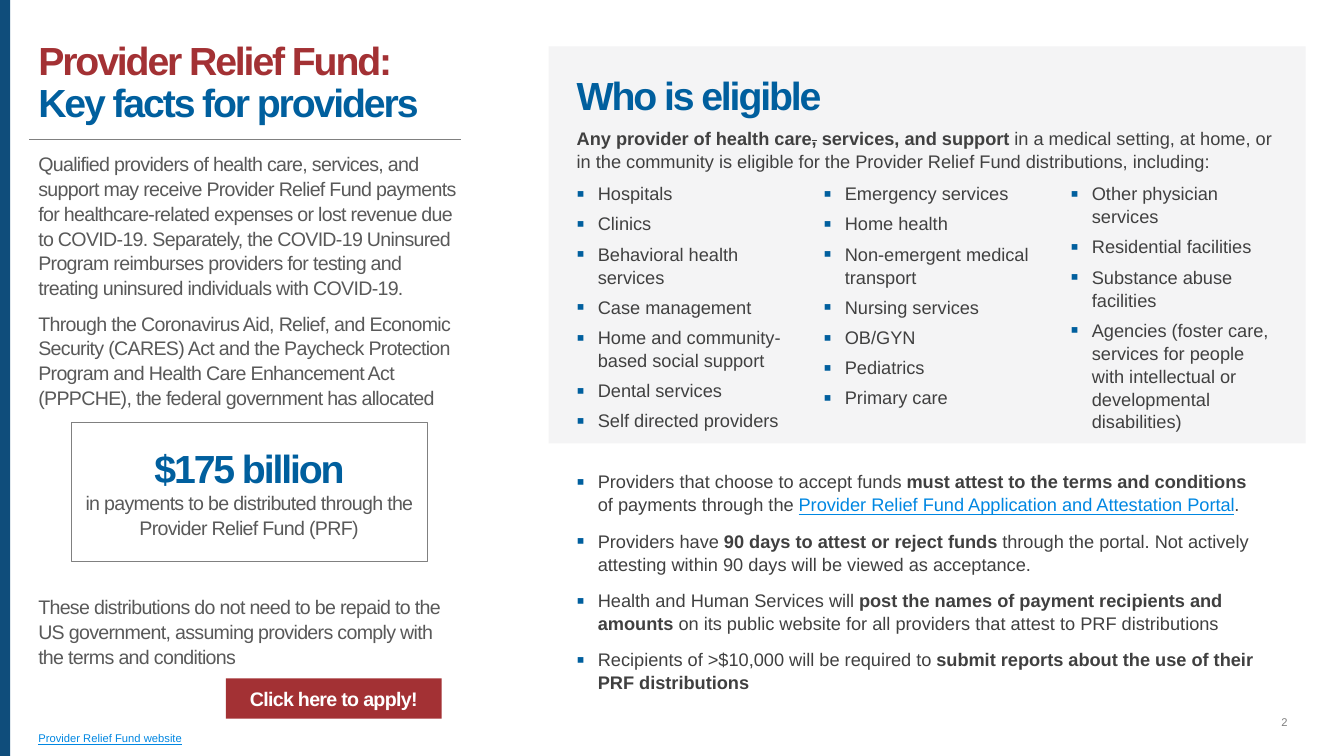
from lxml import etree
from pptx import Presentation, util as u
from pptx.dml.color import RGBColor
from pptx.enum import shapes, text
from pptx.oxml import ns

SCALE = 9144  # EMU per px, 100 px to the inch
COLORS = {
    "navy": "0F4D7B", "blue": "005F9E", "red": "A33134", "link": "0087E2",
    "panel": "F4F4F5", "rule": "808080", "body": "595959", "dark": "404040",
    "white": "FFFFFF",
}
ALIGN = {"left": text.PP_ALIGN.LEFT, "center": text.PP_ALIGN.CENTER}
ANCHOR = {"top": text.MSO_ANCHOR.TOP, "middle": text.MSO_ANCHOR.MIDDLE,
          "bottom": text.MSO_ANCHOR.BOTTOM}
BODY = dict(size=14, color="body", tracking=-50, anchor="bottom")
HEADING = dict(size=28, color="blue", bold=True, tracking=-150, anchor="bottom")
DETAIL = dict(size=13, color="dark")
BOLD = dict(bold=True)
LINK = dict(color="link", underline=True)


def px(*lengths):
    return [u.Emu(length * SCALE) for length in lengths]


def rgb(name):
    return RGBColor.from_string(COLORS[name])


class SlideBuilder:
    def __init__(self, presentation, font="Arial"):
        self.slide = presentation.slides.add_slide(presentation.slide_layouts[5])
        self.font = font

    def add_bullet(self, paragraph):
        properties = paragraph._p.get_or_add_pPr()
        properties.set("marL", str(21 * SCALE))
        properties.set("indent", str(-21 * SCALE))

        def add(parent, tag, **attributes):
            return etree.SubElement(parent, ns.qn(tag), **attributes)

        add(add(properties, "a:buClr"), "a:srgbClr", val=COLORS["blue"])
        add(properties, "a:buSzPct", val="125000")
        add(properties, "a:buFont", typeface=self.font)
        add(properties, "a:buChar", char="▪")

    def add_run(self, paragraph, words, size, color, bold=False, underline=False,
                strike=False, tracking=0):
        for index, line in enumerate(words.split("\n")):
            if index:
                paragraph.add_line_break()
            if not line:
                continue
            run = paragraph.add_run()
            run.text = line
            font = run.font
            font.name, font.size, font.bold = self.font, u.Pt(size), bold
            font.color.rgb = rgb(color)
            properties = run._r.get_or_add_rPr()
            if underline:
                font.underline = True
            if strike:
                properties.set("strike", "sngStrike")
            if tracking:
                properties.set("spc", str(tracking))

    def fill_text(self, shape, paragraphs, align="left", anchor="top", before=0,
                  line=1.05, bullets=False, margin=0, wrap=True, **style):
        """Fill a shape; a paragraph is a string or a list of (words, changes)."""
        frame = shape.text_frame
        frame.auto_size = text.MSO_AUTO_SIZE.NONE
        frame.word_wrap = wrap
        frame.vertical_anchor = ANCHOR[anchor]
        frame.margin_left = frame.margin_right = u.Emu(margin * SCALE)
        frame.margin_top = frame.margin_bottom = 0
        for index, runs in enumerate(paragraphs):
            paragraph = frame.add_paragraph() if index else frame.paragraphs[0]
            if bullets:
                self.add_bullet(paragraph)
            paragraph.alignment = ALIGN[align]
            paragraph.line_spacing = line
            paragraph.space_before = u.Pt(before if index else 0)
            for words, changes in [(runs, {})] if isinstance(runs, str) else runs:
                self.add_run(paragraph, words, **{**style, **changes})

    def title(self, box, paragraphs, **style):
        title = self.slide.shapes.title
        title.left, title.top, title.width, title.height = px(*box)
        self.fill_text(title, paragraphs, **style)

    def text(self, box, *paragraphs, **style):
        self.fill_text(self.slide.shapes.add_textbox(*px(*box)), paragraphs, **style)

    def box(self, box, fill=None, line=None, kind=shapes.MSO_SHAPE.RECTANGLE):
        shape = self.slide.shapes.add_shape(kind, *px(*box))
        shape.shadow.inherit = False
        if fill:
            shape.fill.solid()
            shape.fill.fore_color.rgb = rgb(fill)
        else:
            shape.fill.background()
        if line:
            shape.line.color.rgb = rgb(line)
            shape.line.width = u.Pt(0.75)
        else:
            shape.line.fill.background()
        return shape

    def button(self, box, words, **style):
        shape = self.box(box, fill="red", kind=shapes.MSO_SHAPE.ROUNDED_RECTANGLE)
        shape.adjustments[0] = 0
        self.fill_text(shape, [words], align="center", margin=10, **style)

    def rule(self, *ends):
        line = self.slide.shapes.add_connector(shapes.MSO_CONNECTOR.STRAIGHT, *px(*ends))
        line.line.color.rgb = rgb("rule")
        line.line.width = u.Pt(0.75)
        etree.SubElement(line._element.spPr, ns.qn("a:effectLst"))


def add_key_facts(builder):
    builder.title((38, 30, 428, 94), [[("Provider Relief Fund:\n", dict(color="red")),
                                       ("Key facts for providers", {})]],
                  **HEADING, line=u.Pt(30))
    builder.rule(29, 138, 457, 138)
    builder.text((38, 156, 419, 141),
                 "Qualified providers of health care, services, and support may receive "
                 "Provider Relief Fund payments for healthcare-related expenses or lost "
                 "revenue due to COVID-19. Separately, the COVID-19 Uninsured Program "
                 "reimburses providers for testing and treating uninsured individuals "
                 "with COVID-19.", **BODY)
    builder.text((38, 312, 419, 94),
                 "Through the Coronavirus Aid, Relief, and Economic Security (CARES) Act "
                 "and the Paycheck Protection Program and Health Care Enhancement Act "
                 "(PPPCHE), the federal government has allocated", **BODY)
    builder.box((71, 419, 353, 138), line="rule")
    builder.text((98, 441, 299, 47), "$175 billion", align="center", **HEADING)
    builder.text((79, 488, 336, 47), "in payments to be distributed through the "
                 "Provider Relief Fund (PRF)", align="center", **BODY)
    builder.text((38, 592, 400, 71),
                 "These distributions do not need to be repaid to the US government, "
                 "assuming providers comply with the terms and conditions", **BODY)
    builder.button((224, 673, 214, 40), "Click here to apply!",
                   **{**BODY, "color": "white", "bold": True, "anchor": "middle"})
    builder.text((38, 726, 1042, 13), "Provider Relief Fund website",
                 size=8, anchor="bottom", **LINK)


def add_eligibility(builder):
    builder.box((544, 46, 751, 394), fill="panel")
    builder.text((572, 70, 299, 47), "Who is eligible", **HEADING)
    builder.text((572, 125, 696, 44), [
        ("Any provider of health care", BOLD), (",", dict(bold=True, strike=True)),
        (" services, and support ", BOLD),
        ("in a medical setting, at home, or in the community is eligible for the "
         "Provider Relief Fund distributions, including:", {})], **DETAIL)
    columns = [
        ["Hospitals", "Clinics", "Behavioral health services", "Case management",
         "Home and community-based social support", "Dental services",
         "Self directed providers"],
        ["Emergency services", "Home health", "Non-emergent medical transport",
         "Nursing services", "OB/GYN", "Pediatrics", "Primary care"],
        ["Other physician services", "Residential facilities",
         "Substance abuse facilities",
         "Agencies (foster care, services for people with intellectual or "
         "developmental disabilities)"],
    ]
    for index, providers in enumerate(columns):
        builder.text((572 + 245 * index, 180, 207, 249), *providers,
                     bullets=True, before=5.2, **DETAIL)


def add_conditions(builder):
    builder.text(
        (572, 466, 696, 224),
        [("Providers that choose to accept funds ", {}),
         ("must attest to the terms and conditions\n", BOLD),
         ("of payments through the ", {}),
         ("Provider Relief Fund Application and Attestation Portal", LINK), (".", {})],
        [("Providers have ", {}), ("90 days to attest or reject funds ", BOLD),
         ("through the portal. Not actively attesting within 90 days will be viewed "
          "as acceptance.", {})],
        [("Health and Human Services will ", {}),
         ("post the names of payment recipients and amounts", BOLD),
         (" on its public website for all providers that attest to PRF distributions", {})],
        [("Recipients of >$10,000 will be required to ", {}),
         ("submit reports about the use of their PRF distributions", BOLD)],
        bullets=True, before=9.6, **DETAIL)


def main():
    presentation = Presentation()
    presentation.slide_width, presentation.slide_height = px(1333, 750)
    builder = SlideBuilder(presentation)
    builder.box((0, 0, 10, 750), fill="navy")
    add_key_facts(builder)
    add_eligibility(builder)
    add_conditions(builder)
    builder.text((1267, 710, 14, 13), "2", size=8, color="rule", align="center",
                 anchor="middle", wrap=False)
    presentation.save("out.pptx")


if __name__ == "__main__":
    main()
